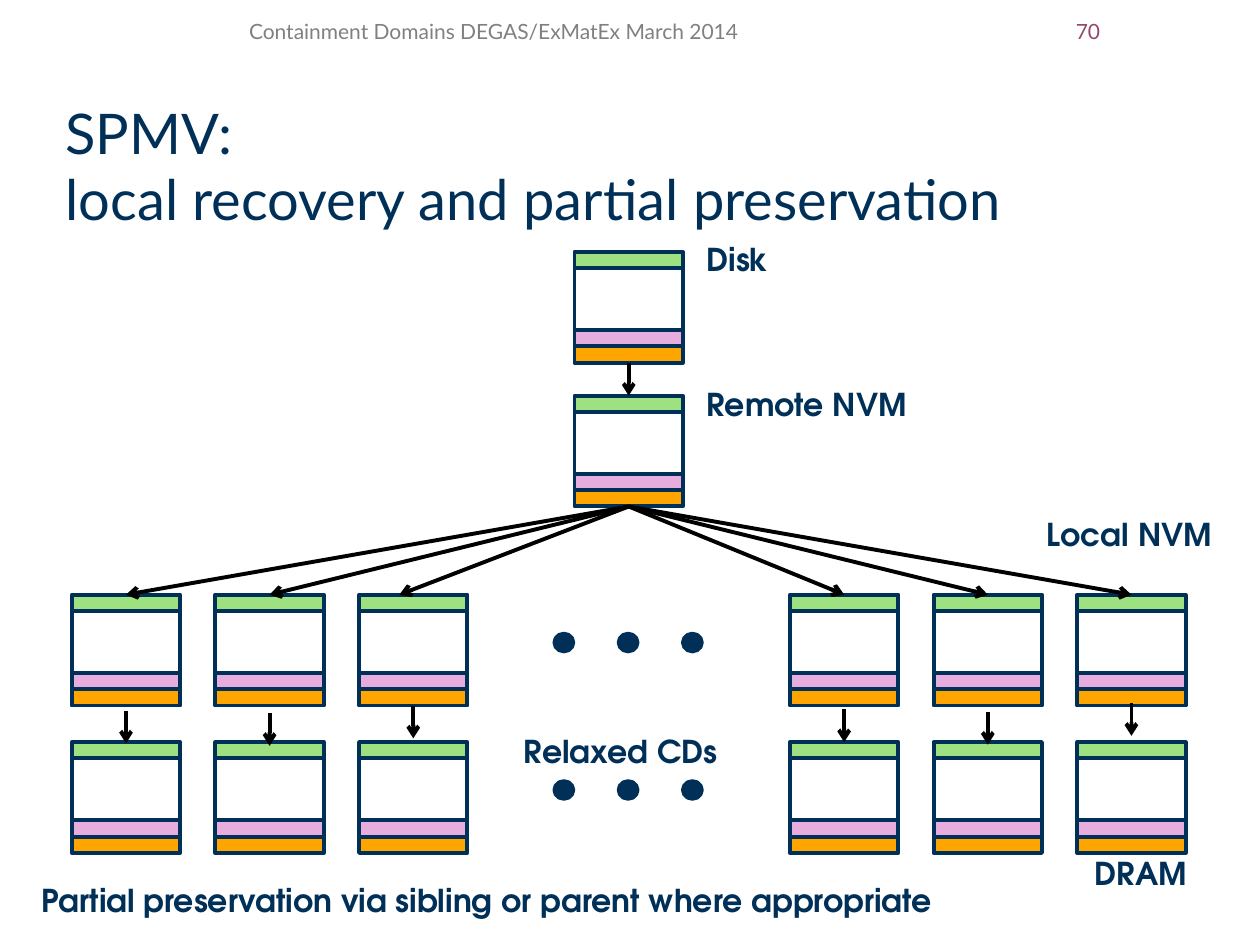
from dataclasses import dataclass

from lxml.etree import SubElement
from pptx import Presentation
from pptx.dml.color import RGBColor
from pptx.enum.shapes import MSO_CONNECTOR, MSO_SHAPE
from pptx.enum.text import MSO_ANCHOR, MSO_AUTO_SIZE, PP_ALIGN
from pptx.oxml.ns import qn
from pptx.util import Inches, Pt


@dataclass(frozen=True)
class Theme:
    navy: str = "003057"
    black: str = "000000"
    gray: str = "808080"
    plum: str = "94476B"
    green: str = "9DE180"
    pink: str = "E6ADDE"
    orange: str = "FFA500"
    body: str = "Lato"
    label: str = "TeX Gyre Adventor"
    title_size: int = 32
    label_size: int = 18
    head_size: int = 12
    stroke: float = 2.25


THEME = Theme()
LEFT, PITCH, WIDTH = 0.57, 1.14, 0.86
BAND, CORE = 0.13, 0.49
HEIGHT = 3 * BAND + CORE
MIDDLE = 3.5
SIDES = (0, 1, 2, 5, 6, 7)
DISK, REMOTE, LOCAL, DRAM = 2, 3.14, 4.72, 5.89


def color(code):
    return RGBColor.from_string(code)


def center(col):
    return LEFT + col * PITCH + WIDTH / 2


def style(frame, text, font=THEME.label, size=THEME.label_size, ink=THEME.navy,
          bold=False, align=PP_ALIGN.LEFT, anchor=MSO_ANCHOR.TOP, spacing=None,
          fit=MSO_AUTO_SIZE.NONE):
    frame.word_wrap = True
    frame.auto_size = fit
    frame.vertical_anchor = anchor
    frame.text = text
    para = frame.paragraphs[0]
    para.alignment = align
    para.line_spacing = spacing
    for run in para.runs:
        run.font.name = font
        run.font.size = Pt(size)
        run.font.bold = bold
        run.font.color.rgb = color(ink)


def add_text(slide, text, left, top, width, height=0.4, **look):
    box = slide.shapes.add_textbox(*map(Inches, (left, top, width, height)))
    style(box.text_frame, text, **look)


def add_label(slide, text, left, top, width):
    add_text(slide, text, left, top, width, bold=True,
             fit=MSO_AUTO_SIZE.SHAPE_TO_FIT_TEXT)


def add_shape(shapes, kind, left, top, width, height, fill=None):
    shape = shapes.add_shape(kind, *map(Inches, (left, top, width, height)))
    shape.shadow.inherit = False
    if fill:
        shape.fill.solid()
        shape.fill.fore_color.rgb = color(fill)
    else:
        shape.fill.background()
    shape.line.color.rgb = color(THEME.navy)
    shape.line.width = Pt(THEME.stroke)


def add_store(slide, col, top):
    """Draw one memory block: an open core between coloured bands."""
    group = slide.shapes.add_group_shape()
    bands = (
        (BAND, CORE, None),
        (0, BAND, THEME.green),
        (BAND + CORE, BAND, THEME.pink),
        (2 * BAND + CORE, BAND, THEME.orange),
    )
    for drop, height, fill in bands:
        add_shape(group.shapes, MSO_SHAPE.RECTANGLE, LEFT + col * PITCH,
                  top + drop, WIDTH, height, fill)


def add_arrow(slide, start, end):
    line = slide.shapes.add_connector(
        MSO_CONNECTOR.STRAIGHT, *map(Inches, (*start, *end)))
    line.line.color.rgb = color(THEME.black)
    line.line.width = Pt(THEME.stroke)
    SubElement(line.line._get_or_add_ln(), qn("a:tailEnd"), type="arrow")
    SubElement(line._element.spPr, qn("a:effectLst"))


def add_dots(slide, top):
    for step in range(3):
        add_shape(slide.shapes, MSO_SHAPE.OVAL, 4.4 + step * 0.51, top,
                  0.15, 0.14, THEME.navy)


def add_title(slide, text):
    title = slide.shapes.title
    title.left, title.top, title.width, title.height = map(
        Inches, (0.42, 0.75, 9.41, 0.73))
    style(title.text_frame, text, font=THEME.body, size=THEME.title_size,
          spacing=0.99)


def add_header(slide):
    look = dict(font=THEME.body, size=THEME.head_size, anchor=MSO_ANCHOR.MIDDLE)
    add_text(slide, "70", 7.92, 0, 0.91, 0.5, ink=THEME.plum,
             align=PP_ALIGN.RIGHT, **look)
    add_text(slide, "Containment Domains DEGAS/ExMatEx March 2014", 0.92, 0,
             6, 0.5, ink=THEME.gray, align=PP_ALIGN.CENTER, **look)


def add_tree(slide):
    for top in (DISK, REMOTE):
        add_store(slide, MIDDLE, top)
    for top in (LOCAL, DRAM):
        for col in SIDES:
            add_store(slide, col, top)
        add_dots(slide, top + 0.31)

    mid = center(MIDDLE)
    add_arrow(slide, (mid, DISK + HEIGHT), (mid, REMOTE))
    tips = (1, 2.14, 3.17, 6.7, 7.84, 8.98)
    starts = (5.64, 5.66, 5.6, 5.63, 5.65, 5.58)
    for col, tip, start in zip(SIDES, tips, starts):
        add_arrow(slide, (mid, REMOTE + HEIGHT), (tip, LOCAL))
        add_arrow(slide, (center(col), start), (center(col), start + 0.26))


def main():
    deck = Presentation()
    deck.slide_width, deck.slide_height = Inches(10), Inches(7.5)
    slide = deck.slides.add_slide(deck.slide_layouts[5])
    add_title(slide, "SPMV:\vlocal recovery and partial preservation")
    add_header(slide)
    add_tree(slide)
    labels = (
        ("Disk", 5.51, 1.86, 0.83),
        ("Remote NVM", 5.51, 3.01, 1.99),
        ("Local NVM", 8.21, 4.04, 1.79),
        ("Relaxed CDs", 4.06, 5.76, 1.99),
        ("DRAM", 8.59, 6.73, 1.41),
        ("Partial preservation via sibling or parent where appropriate",
         0.23, 6.94, 8.97),
    )
    for label in labels:
        add_label(slide, *label)
    deck.save("out.pptx")


if __name__ == "__main__":
    main()
